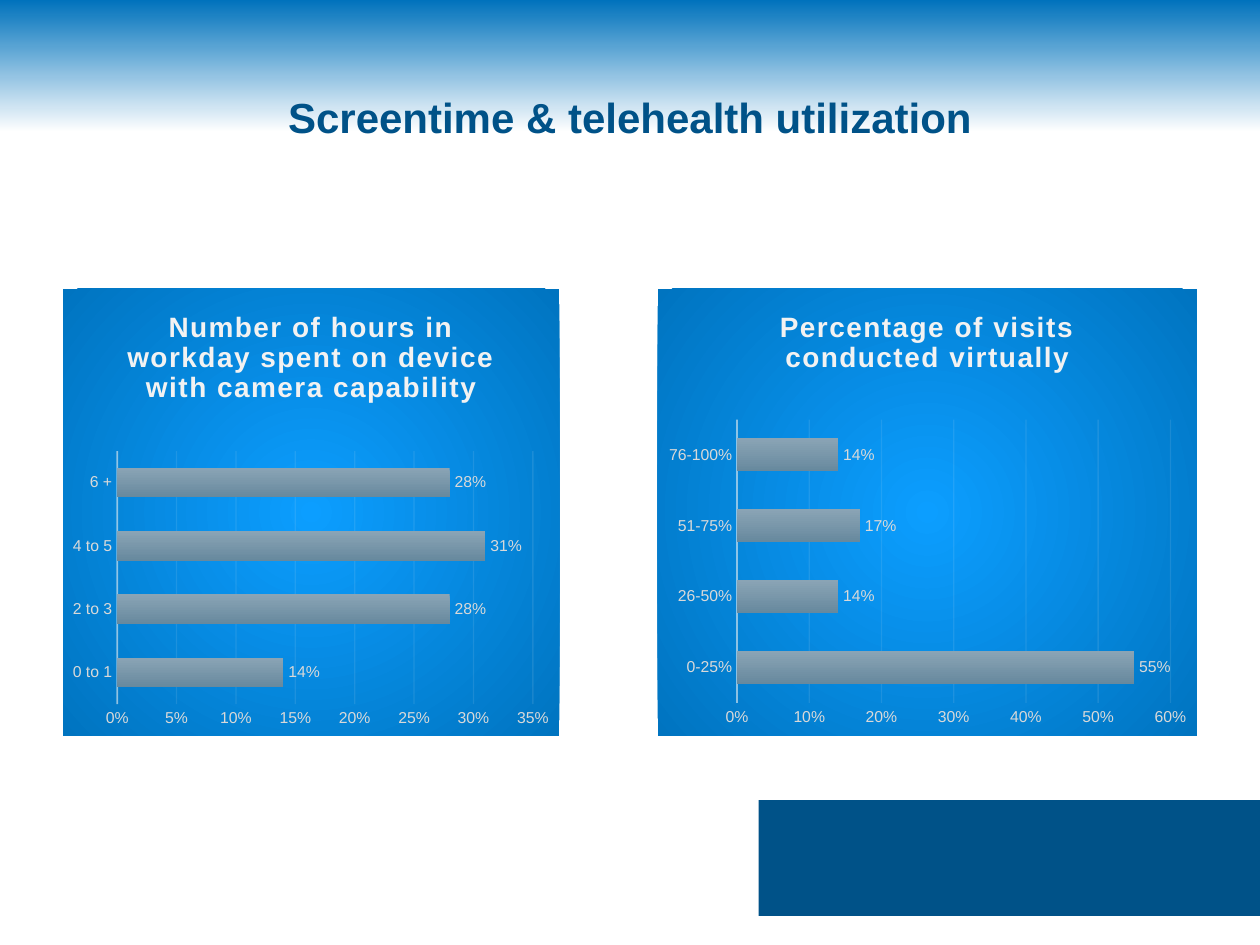
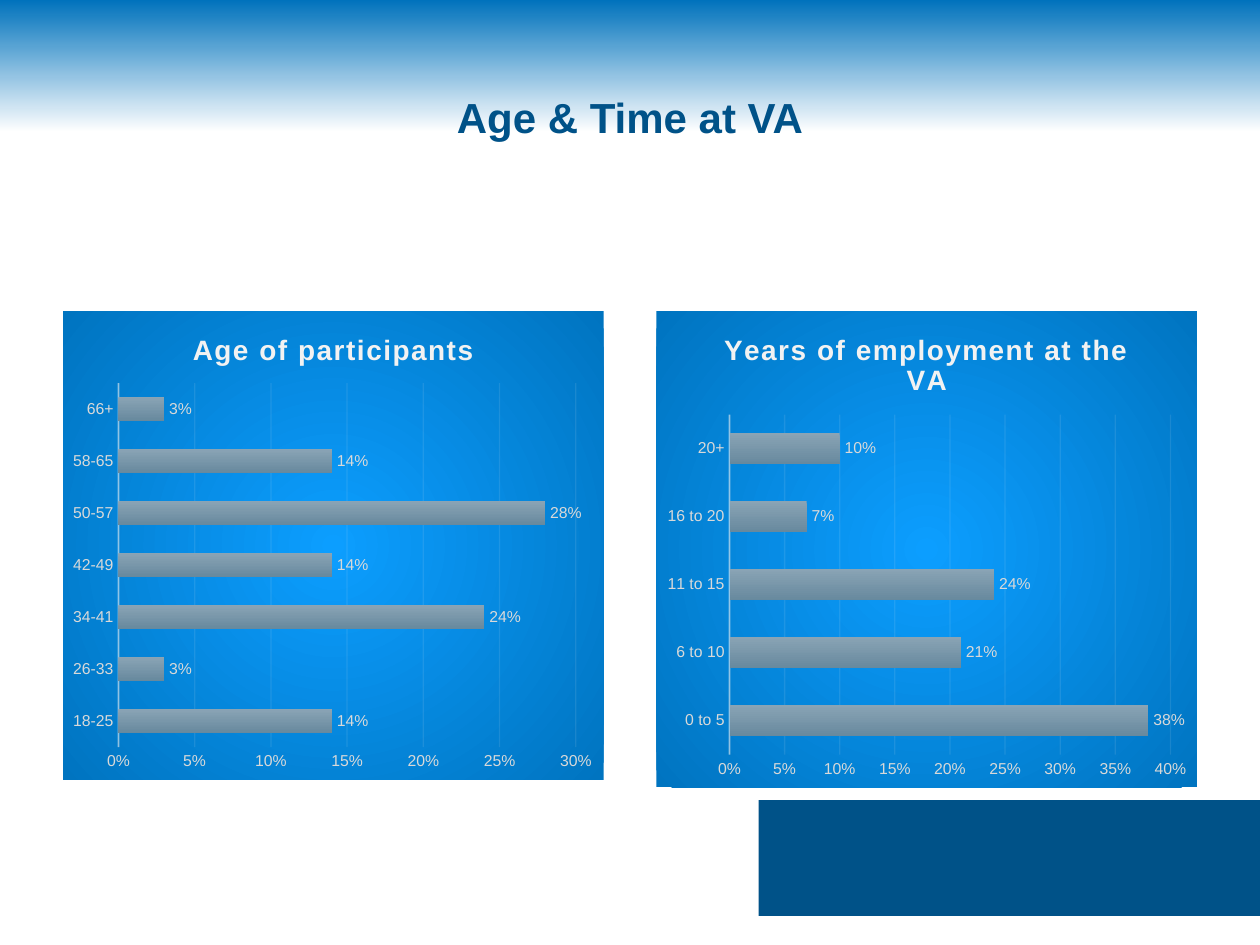
from lxml.etree import SubElement
from pptx import Presentation
from pptx.chart.data import CategoryChartData
from pptx.dml.color import RGBColor
from pptx.enum.chart import XL_CHART_TYPE, XL_LABEL_POSITION, XL_TICK_MARK
from pptx.enum.shapes import MSO_SHAPE
from pptx.enum.text import MSO_ANCHOR, PP_ALIGN
from pptx.oxml import parse_xml
from pptx.oxml.ns import nsdecls, qn
from pptx.util import Pt

PX = 9144
FONT = "Arial"
NAVY = RGBColor(0x00, 0x52, 0x88)
SKY = RGBColor(0x00, 0x72, 0xBC)
WHITE = RGBColor(0xFF, 0xFF, 0xFF)
PALE = RGBColor(0xF2, 0xF2, 0xF2)
LABEL = RGBColor(0xD9, 0xD9, 0xD9)
BAR_TOP = RGBColor(0x8A, 0xA4, 0xB5)
BAR_BOTTOM = RGBColor(0x67, 0x89, 0x9E)
GLOW = RGBColor(0x0C, 0x9E, 0xFF)
EDGE = RGBColor(0x00, 0x74, 0xC0)

SLIDES = [
    ("Screentime & telehealth utilization", [
        dict(title="Number of hours in workday spent on device with camera capability",
             frame=(50, 229, 394, 355), plot=(43, 129, 330, 201), top=0.35, step=0.05,
             bars={"0 to 1": 0.14, "2 to 3": 0.28, "4 to 5": 0.31, "6 +": 0.28}),
        dict(title="Percentage of visits conducted virtually",
             frame=(522, 229, 428, 355), plot=(63, 104, 344, 225), top=0.6, step=0.1,
             bars={"0-25%": 0.55, "26-50%": 0.14, "51-75%": 0.17, "76-100%": 0.14}),
    ]),
    ("Age & Time at VA", [
        dict(title="Age of participants",
             frame=(50, 247, 429, 372), plot=(44, 57, 363, 289), top=0.3, step=0.05,
             bars={"18-25": 0.14, "26-33": 0.03, "34-41": 0.24, "42-49": 0.14,
                   "50-57": 0.28, "58-65": 0.14, "66+": 0.03}),
        dict(title="Years of employment at the VA",
             frame=(521, 247, 429, 378), plot=(58, 82, 350, 270), top=0.4, step=0.05,
             bars={"0 to 5": 0.38, "6 to 10": 0.21, "11 to 15": 0.24,
                   "16 to 20": 0.07, "20+": 0.1}),
    ]),
]


def shade_down(fill, first, last, end=1.0):
    fill.gradient()
    fill.gradient_angle = 270
    for stop, color, position in zip(fill.gradient_stops, (first, last), (0, end)):
        stop.color.rgb = color
        stop.position = position


def draw_line(line, width, opacity):
    line.color.rgb = PALE
    line.width = Pt(width)
    color = line.fill._xPr.find(".//" + qn("a:srgbClr"))
    SubElement(color, qn("a:alpha"), val=str(opacity * 1000))


deck = Presentation()
deck.slide_width = 1000 * PX
deck.slide_height = 750 * PX
shade_down(deck.slide_master.background.fill, SKY, WHITE, 0.14)

for heading, panels in SLIDES:
    page = deck.slides.add_slide(deck.slide_layouts[5])
    band = page.shapes.add_shape(MSO_SHAPE.RECTANGLE, 602 * PX, 635 * PX, 398 * PX, 92 * PX)
    band.shadow.inherit = False
    band.fill.solid()
    band.fill.fore_color.rgb = NAVY
    band.line.fill.background()

    title = page.shapes.title
    title.left, title.top, title.width, title.height = 50 * PX, 30 * PX, 900 * PX, 125 * PX
    title.text_frame.text = heading
    title.text_frame.vertical_anchor = MSO_ANCHOR.MIDDLE
    para = title.text_frame.paragraphs[0]
    para.alignment = PP_ALIGN.CENTER
    para.font.name = FONT
    para.font.size = Pt(24)
    para.font.bold = True
    para.font.color.rgb = NAVY

    for panel in panels:
        data = CategoryChartData(number_format="0%")
        data.categories = list(panel["bars"])
        data.add_series("Series 1", list(panel["bars"].values()))
        frame = [value * PX for value in panel["frame"]]
        chart = page.shapes.add_chart(XL_CHART_TYPE.BAR_CLUSTERED, *frame, data).chart
        chart.has_legend = False
        chart.font.name = FONT
        chart.font.size = Pt(10)
        chart.font.color.rgb = NAVY

        chart.has_title = True
        chart.chart_title.include_in_layout = False
        chart.chart_title.text_frame.text = panel["title"]
        para = chart.chart_title.text_frame.paragraphs[0]
        para.font.name = FONT
        para.font.size = Pt(16)
        para.font.bold = True
        para.font.color.rgb = PALE
        para.font._element.set("spc", "100")

        categories, values = chart.category_axis, chart.value_axis
        for axis in (categories, values):
            axis.major_tick_mark = XL_TICK_MARK.NONE
            axis.minor_tick_mark = XL_TICK_MARK.NONE
        draw_line(categories.format.line, 1, 54)
        values.format.line.fill.background()
        values.has_major_gridlines = True
        draw_line(values.major_gridlines.format.line, 0.75, 10)
        values.minimum_scale = 0
        values.maximum_scale = panel["top"]
        values.major_unit = panel["step"]
        values.tick_labels.number_format = "0%"
        values.tick_labels.number_format_is_linked = False

        plot = chart.plots[0]
        plot.gap_width = 115
        plot.overlap = -20
        plot.vary_by_categories = False
        plot.has_data_labels = True
        labels = plot.data_labels
        labels.show_value = True
        labels.position = XL_LABEL_POSITION.OUTSIDE_END
        labels.number_format = "0%"
        labels.number_format_is_linked = False
        for text in (categories.tick_labels, values.tick_labels, labels):
            text.font.name = FONT
            text.font.size = Pt(9)
            text.font.color.rgb = LABEL
        shade_down(plot.series[0].format.fill, BAR_TOP, BAR_BOTTOM)

        left, top, width, height = panel["plot"]
        full_width, full_height = panel["frame"][2:]
        area = chart._chartSpace.chart.plotArea
        for old in area.findall(qn("c:layout")):
            area.remove(old)
        layout = parse_xml(f"<c:layout {nsdecls('c')}><c:manualLayout/></c:layout>")
        settings = [("layoutTarget", "inner"), ("xMode", "edge"), ("yMode", "edge"),
                    ("x", left / full_width), ("y", top / full_height),
                    ("w", width / full_width), ("h", height / full_height)]
        for tag, value in settings:
            SubElement(layout[0], qn("c:" + tag), val=str(value))
        area.insert(0, layout)

        chart._chartSpace.chart.addnext(parse_xml(
            f"<c:spPr {nsdecls('c', 'a')}><a:gradFill><a:gsLst>"
            f'<a:gs pos="0"><a:srgbClr val="{GLOW}"/></a:gs>'
            f'<a:gs pos="100000"><a:srgbClr val="{EDGE}"/></a:gs></a:gsLst>'
            '<a:path path="circle"><a:fillToRect l="50000" t="50000" r="50000" b="50000"/>'
            "</a:path></a:gradFill><a:ln><a:noFill/></a:ln></c:spPr>"))

deck.save("out.pptx")
